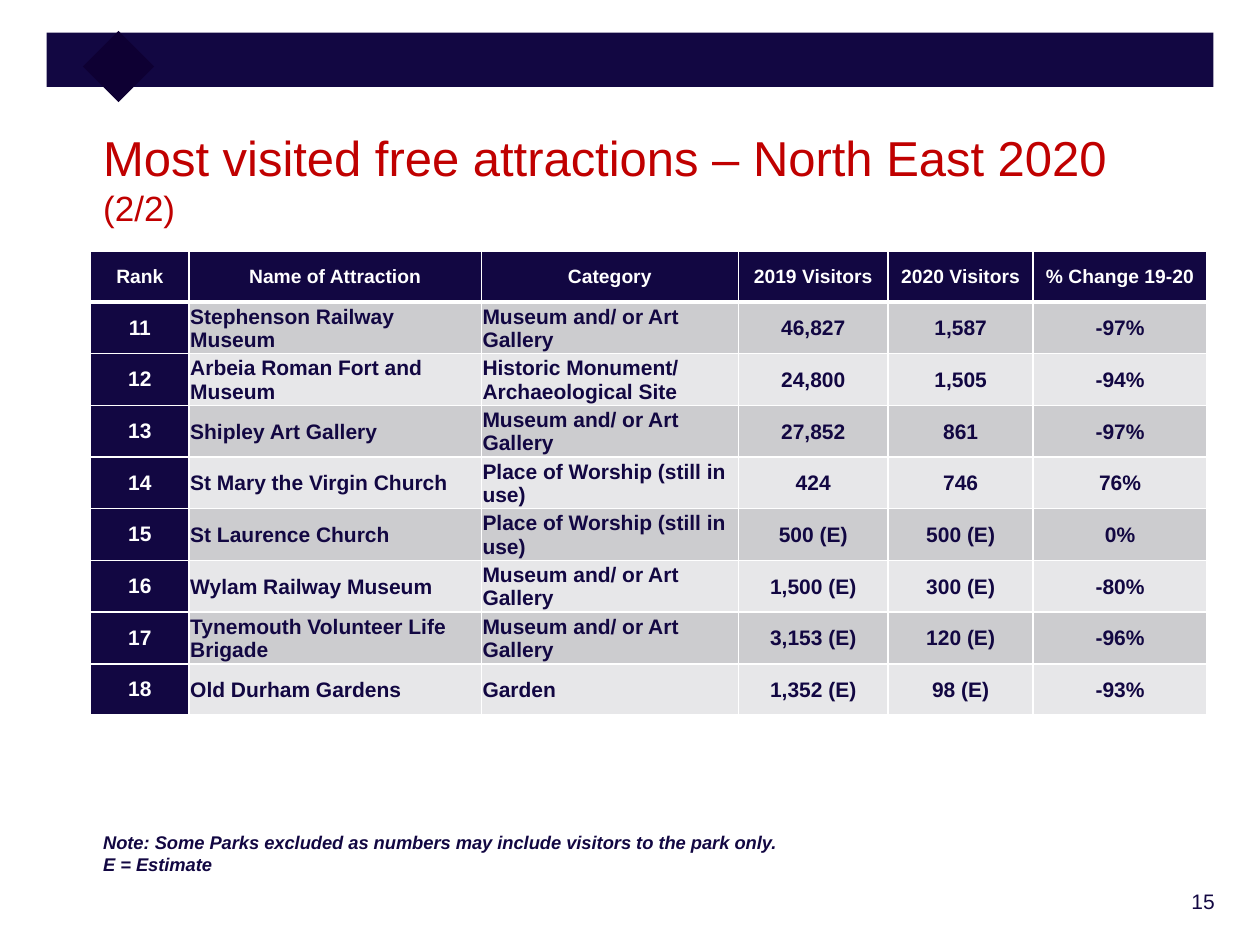
import pptx
import pptx.dml.color
import pptx.enum.shapes
import pptx.enum.text
import pptx.oxml
import pptx.oxml.ns
import pptx.util

RGBColor = pptx.dml.color.RGBColor
ALIGN = pptx.enum.text.PP_ALIGN
ANCHOR = pptx.enum.text.MSO_ANCHOR
Inches = pptx.util.Inches

NAVY = RGBColor(0x12, 0x07, 0x42)
DEEP_NAVY = RGBColor(0x0E, 0x00, 0x33)
RED = RGBColor(0xC0, 0x00, 0x00)
WHITE = RGBColor(0xFF, 0xFF, 0xFF)
BANDS = (RGBColor(0xCC, 0xCC, 0xCF), RGBColor(0xE7, 0xE7, 0xE9))

SLIDE_WIDTH, SLIDE_HEIGHT = 10, 7.5
LEFT = 0.72
COLUMN_WIDTHS = (0.78, 2.32, 2.04, 1.19, 1.15, 1.38)
ROW_HEIGHT = 3.66 / 9
TEXT_COLUMNS = (1, 2)

HEADINGS = ("Rank", "Name of Attraction", "Category",
            "2019 Visitors", "2020 Visitors", "% Change 19-20")
MUSEUM = "Museum and/ or Art Gallery"
WORSHIP = "Place of Worship (still in use)"
FIRST_RANK = 11
ATTRACTIONS = (
    ("Stephenson Railway Museum", MUSEUM, "46,827", "1,587", "-97%"),
    ("Arbeia Roman Fort and Museum", "Historic Monument/ Archaeological Site",
     "24,800", "1,505", "-94%"),
    ("Shipley Art Gallery", MUSEUM, "27,852", "861", "-97%"),
    ("St Mary the Virgin Church", WORSHIP, "424", "746", "76%"),
    ("St Laurence Church", WORSHIP, "500 (E)", "500 (E)", "0%"),
    ("Wylam Railway Museum", MUSEUM, "1,500 (E)", "300 (E)", "-80%"),
    ("Tynemouth Volunteer Life Brigade", MUSEUM, "3,153 (E)", "120 (E)", "-96%"),
    ("Old Durham Gardens", "Garden", "1,352 (E)", "98 (E)", "-93%"),
)


def style(font, size, color, bold=False, italic=False):
    font.name = "Arial"
    font.size = pptx.util.Pt(size)
    font.color.rgb = color
    font.bold = bold
    font.italic = italic


def add_text_frame(slide, box, anchor=ANCHOR.TOP):
    frame = slide.shapes.add_textbox(*map(Inches, box)).text_frame
    frame.word_wrap = True
    frame.vertical_anchor = anchor
    return frame


def add_block(slide, box, color):
    block = slide.shapes.add_shape(
        pptx.enum.shapes.MSO_SHAPE.RECTANGLE, *map(Inches, box))
    block.shadow.inherit = False
    block.fill.solid()
    block.fill.fore_color.rgb = color
    block.line.fill.background()
    return block


def add_banner(slide, box):
    """Full-width bar with a diamond hanging near its left end."""
    left, top, width, height = box
    add_block(slide, box, NAVY)
    side = 0.4
    diamond = add_block(
        slide, (left + 0.04 * width, top + 0.16 * height, side, side), DEEP_NAVY)
    diamond.rotation = 45


def add_title(slide, box):
    frame = add_text_frame(slide, box, ANCHOR.BOTTOM)
    frame.margin_bottom = Inches(0.03)
    paragraph = frame.paragraphs[0]
    heading = paragraph.add_run()
    heading.text = "Most visited free attractions – North East 2020"
    style(heading.font, 28, RED)
    paragraph.add_line_break()
    part = paragraph.add_run()
    part.text = "(2/2)"
    style(part.font, 20, RED)


def set_borders(cell, bottom_width):
    """White rules on all four sides; they come first in the cell properties."""
    properties = cell._tc.get_or_add_tcPr()
    widths = {"lnL": 1, "lnR": 1, "lnT": 1, "lnB": bottom_width}
    for position, (side, width) in enumerate(widths.items()):
        properties.insert(position, pptx.oxml.parse_xml(
            f'<a:{side} {pptx.oxml.ns.nsdecls("a")} w="{pptx.util.Pt(width)}">'
            f'<a:solidFill><a:srgbClr val="{WHITE}"/></a:solidFill></a:{side}>'))


def fill_cell(cell, text, row, column):
    is_header = row == 0
    is_dark = is_header or column == 0
    cell.text = text
    cell.vertical_anchor = ANCHOR.MIDDLE
    if not is_dark:
        cell.margin_left = cell.margin_right = cell.margin_top = Inches(0.01)
        cell.margin_bottom = 0
    cell.fill.solid()
    cell.fill.fore_color.rgb = NAVY if is_dark else BANDS[(row - 1) % 2]
    paragraph = cell.text_frame.paragraphs[0]
    is_left = not is_header and column in TEXT_COLUMNS
    paragraph.alignment = ALIGN.LEFT if is_left else ALIGN.CENTER
    style(paragraph.runs[0].font, 11 if is_header else 12,
          WHITE if is_dark else NAVY, bold=True)
    # The rule under the header is heavier, and is shared with the row below
    set_borders(cell, 3 if is_header else 1)
    if row == 1:
        top_rule = cell._tc.tcPr.find(pptx.oxml.ns.qn("a:lnT"))
        top_rule.set("w", str(pptx.util.Pt(3)))


def add_attractions_table(slide, left, top):
    rows = [HEADINGS] + [(str(rank), *attraction) for rank, attraction
                         in enumerate(ATTRACTIONS, FIRST_RANK)]
    box = (left, top, sum(COLUMN_WIDTHS), ROW_HEIGHT * len(rows))
    table = slide.shapes.add_table(
        len(rows), len(HEADINGS), *map(Inches, box)).table
    for column, width in zip(table.columns, COLUMN_WIDTHS):
        column.width = Inches(width)
    for row, texts in enumerate(rows):
        table.rows[row].height = Inches(ROW_HEIGHT)
        for column, text in enumerate(texts):
            fill_cell(table.cell(row, column), text, row, column)


def add_note(slide, box):
    frame = add_text_frame(slide, box)
    frame.text = ("Note: Some Parks excluded as numbers may include "
                  "visitors to the park only.\nE = Estimate")
    for paragraph in frame.paragraphs:
        style(paragraph.runs[0].font, 10.5, NAVY, bold=True, italic=True)


def add_page_number(slide, box):
    frame = add_text_frame(slide, box)
    frame.text = "15"
    frame.paragraphs[0].alignment = ALIGN.RIGHT
    style(frame.paragraphs[0].runs[0].font, 12, NAVY)


def main():
    presentation = pptx.Presentation()
    presentation.slide_width = Inches(SLIDE_WIDTH)
    presentation.slide_height = Inches(SLIDE_HEIGHT)
    slide = presentation.slides.add_slide(presentation.slide_layouts[6])

    margin = 0.37
    add_page_number(slide, (8.53, 7, 1.21, 0.36))
    add_banner(slide, (margin, 0.26, SLIDE_WIDTH - 2 * margin, 0.43))
    add_title(slide, (LEFT, 0.95, SLIDE_WIDTH - margin - LEFT, 0.89))
    add_attractions_table(slide, LEFT, 1.99)
    add_note(slide, (LEFT, 6.55, 8.65, 0.45))
    presentation.save("out.pptx")


if __name__ == "__main__":
    main()
